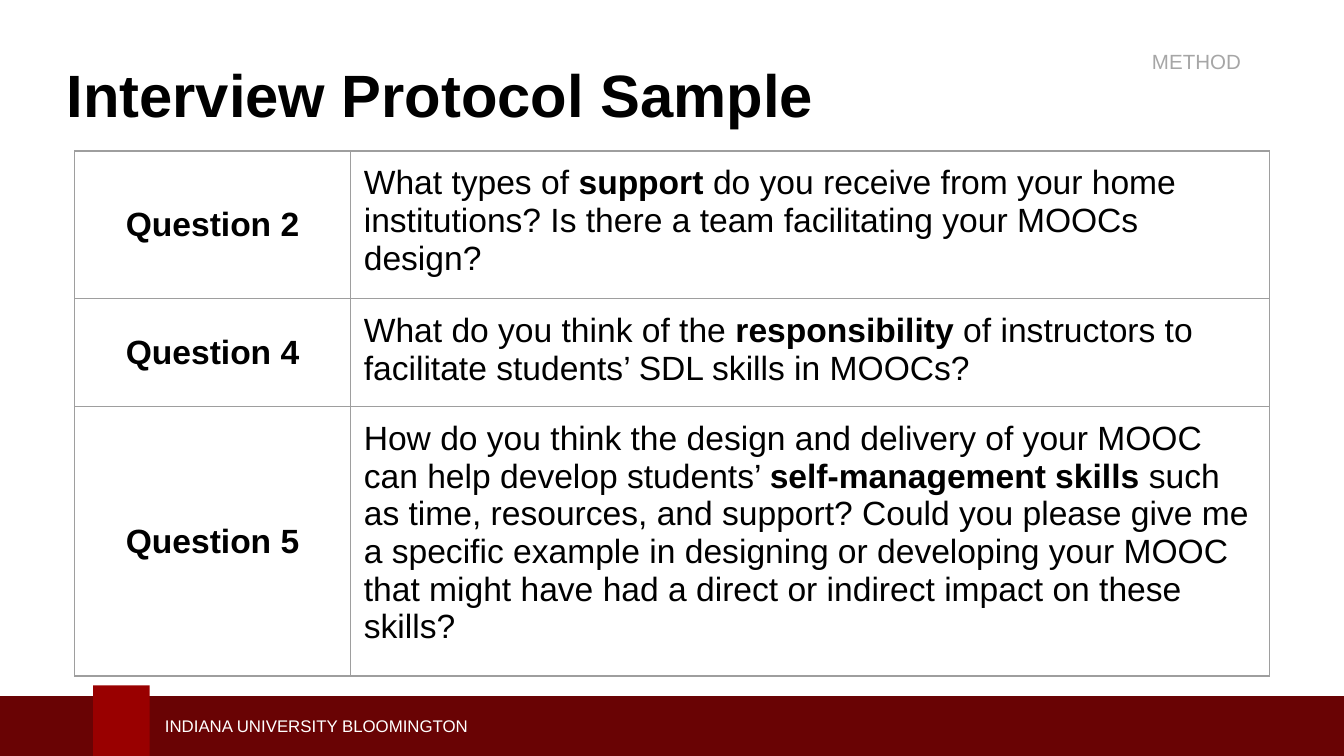
"""Build the interview protocol slide with its question table and footer band."""
from dataclasses import dataclass

from lxml.etree import SubElement
from pptx import Presentation
from pptx.dml.color import RGBColor
from pptx.enum.shapes import MSO_SHAPE as Shape
from pptx.enum.text import MSO_ANCHOR as Anchor, PP_ALIGN as Align
from pptx.oxml.ns import qn
from pptx.util import Inches, Pt

WIDTH = Inches(10)
HEIGHT = WIDTH * 9 // 16
FONT = "Arial"
COLORS = {
    "band": "690304",
    "tile": "990000",
    "white": "FFFFFF",
    "black": "000000",
    "grey": "A6A6A6",
    "border": "9E9E9E",
}


@dataclass(frozen=True)
class Box:
    """Hold a position and size as percentages of the slide."""
    x: float
    y: float
    w: float
    h: float

    def emu(self) -> tuple[int, int, int, int]:
        """Return left, top, width and height in EMU."""
        return across(self.x), down(self.y), across(self.w), down(self.h)


@dataclass(frozen=True)
class Block:
    """Describe a filled rectangle."""
    box: Box
    color: str


@dataclass(frozen=True)
class Label:
    """Describe a single line of text."""
    box: Box
    text: str
    size: int
    color: str
    bold: bool = False
    align: Align = Align.LEFT
    anchor: Anchor = Anchor.MIDDLE


@dataclass(frozen=True)
class Question:
    """Describe a table row whose key phrase is bold."""
    name: str
    before: str
    key: str
    after: str
    height: float


BLOCKS = [
    Block(Box(-0.3, 92.09, 100.9, 8.89), "band"),
    Block(Box(6.93, 90.67, 4.2, 10.31), "tile"),
]
LABELS = [
    Label(Box(11.77, 93.95, 38.5, 4.09), "INDIANA UNIVERSITY BLOOMINGTON", 9, "white"),
    Label(Box(4.45, 4.8, 60.4, 15.11), "Interview Protocol Sample", 32, "black", bold=True),
    Label(Box(53.35, 5.56, 39.5, 4.62), "METHOD", 11, "grey",
          align=Align.RIGHT, anchor=Anchor.TOP),
]
TABLE = Box(5.57, 19.97, 88.9, 69.33)
COLUMNS = (20.5, 68.4)
QUESTIONS = [
    Question("Question 2", "What types of ", "support ",
             "do you receive from your home institutions? "
             "Is there a team facilitating your MOOCs design?", 19.44),
    Question("Question 4", "What do you think of the ", "responsibility",
             " of instructors to facilitate students’ SDL skills in MOOCs?", 14.29),
    Question("Question 5", "How do you think the design and delivery of your MOOC "
             "can help develop students’ ", "self-management skills",
             " such as time, resources, and support? Could you please give me "
             "a specific example in designing or developing your MOOC that might "
             "have had a direct or indirect impact on these skills?", 35.6),
]


def across(share: float) -> int:
    """Convert a percentage of the slide width to EMU."""
    return round(WIDTH * share / 100)


def down(share: float) -> int:
    """Convert a percentage of the slide height to EMU."""
    return round(HEIGHT * share / 100)


def rgb(name: str) -> RGBColor:
    """Look up a named colour."""
    return RGBColor.from_string(COLORS[name])


def set_margins(frame, share: float) -> None:
    """Give a text frame or cell the same margin on every side."""
    frame.margin_left = frame.margin_right = across(share)
    frame.margin_top = frame.margin_bottom = across(share)


def format_run(r, size: int, color: str, bold: bool) -> None:
    """Set the font of a run."""
    r.font.name, r.font.size, r.font.bold = FONT, Pt(size), bold
    r.font.color.rgb = rgb(color)


def draw_block(s, block: Block) -> None:
    """Draw a filled rectangle."""
    sp = s.shapes.add_shape(Shape.RECTANGLE, *block.box.emu())
    sp.shadow.inherit = False
    sp.fill.solid()
    sp.fill.fore_color.rgb = rgb(block.color)
    sp.line.fill.background()


def draw_label(s, label: Label) -> None:
    """Draw a line of text."""
    tf = s.shapes.add_textbox(*label.box.emu()).text_frame
    tf.word_wrap = True
    tf.vertical_anchor = label.anchor
    set_margins(tf, 0.5)
    tf.text = label.text
    p = tf.paragraphs[0]
    p.alignment = label.align
    format_run(p.runs[0], label.size, label.color, label.bold)


def style_cell(cell) -> None:
    """Give a cell thin borders, no fill and even margins."""
    tc_pr = cell._tc.get_or_add_tcPr()
    for side in ("lnL", "lnR", "lnT", "lnB"):
        ln = SubElement(tc_pr, qn(f"a:{side}"), w=str(Pt(0.75)))
        fill = SubElement(ln, qn("a:solidFill"))
        SubElement(fill, qn("a:srgbClr"), val=COLORS["border"])
    cell.fill.background()
    set_margins(cell, 1)


def draw_table(s, questions: list[Question]) -> None:
    """Draw the table of questions."""
    table = s.shapes.add_table(len(questions), len(COLUMNS), *TABLE.emu()).table
    table.first_row = table.horz_banding = False
    for column, width in zip(table.columns, COLUMNS):
        column.width = across(width)
    for row, question in zip(table.rows, questions):
        row.height = down(question.height)
        name, body = row.cells
        style_cell(name)
        style_cell(body)
        name.vertical_anchor = Anchor.MIDDLE
        name.text_frame.text = question.name
        p = name.text_frame.paragraphs[0]
        p.alignment = Align.CENTER
        format_run(p.runs[0], 18, "black", True)
        p = body.text_frame.paragraphs[0]
        for text in (question.before, question.key, question.after):
            r = p.add_run()
            r.text = text
            format_run(r, 18, "black", text == question.key)


def main() -> None:
    """Build and save the slide."""
    prs = Presentation()
    prs.slide_width, prs.slide_height = WIDTH, HEIGHT
    s = prs.slides.add_slide(prs.slide_layouts[6])
    for block in BLOCKS:
        draw_block(s, block)
    for label in LABELS:
        draw_label(s, label)
    draw_table(s, QUESTIONS)
    prs.save("out.pptx")


if __name__ == "__main__":
    main()
